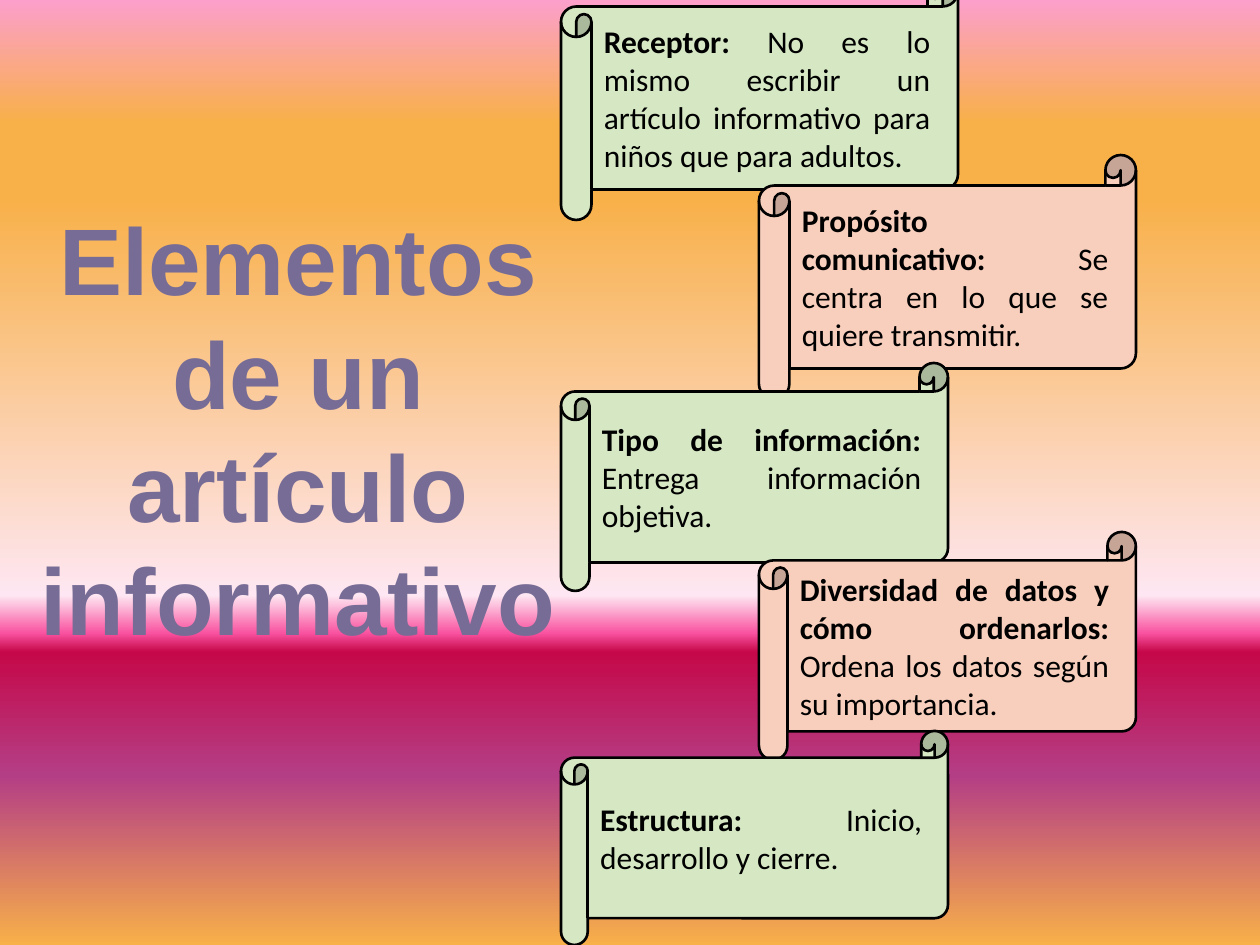
from lxml.etree import SubElement as Sub
from pptx import Presentation
from pptx.dml.color import RGBColor
from pptx.enum.shapes import MSO_SHAPE as Shape
from pptx.enum.text import MSO_ANCHOR as Anchor, MSO_AUTO_SIZE as Auto, PP_ALIGN as Align
from pptx.oxml.ns import qn
from pptx.util import Emu, Pt

SCALE = 914400 / 126
GREEN, PEACH = "D5E7C3", "F8CFBD"
LEFT, RIGHT = 561, 759
STOPS = [(0, "FC9FCB"), (13, "F8B049"), (21, "F8B049"), (63, "FEE7F2"),
         (67, "F952A0"), (69, "C50849"), (82, "B43E85"), (100, "F8B049")]
SCROLLS = [
    (LEFT, -24, 397, 244, GREEN, "Receptor:",
     " No es lo mismo escribir un artículo informativo para niños que para adultos."),
    (RIGHT, 155, 377, 244, PEACH, "Propósito comunicativo: ",
     "Se centra en lo que se quiere transmitir."),
    (LEFT, 363, 387, 228, GREEN, "Tipo de información: ",
     "Entrega información objetiva."),
    (RIGHT, 532, 377, 228, PEACH, "Diversidad de datos y cómo ordenarlos: ",
     "Ordena los datos según su importancia."),
    (LEFT, 731, 387, 214, GREEN, "Estructura:",
     " Inicio, desarrollo y cierre."),
]


def px(*nums):
    """Turn pixels into EMU lengths."""
    return [Emu(round(n * SCALE)) for n in nums]


def color(code):
    """Turn a hex string into a colour."""
    return RGBColor.from_string(code)


def write(para, text, size=18, font="Calibri", ink="000000", bold=False):
    """Add a formatted run to a paragraph and return it."""
    run = para.add_run()
    run.text = text
    run.font.size = Pt(size)
    run.font.name = font
    run.font.bold = bold
    run.font.color.rgb = color(ink)
    return run


def paint(slide):
    """Fill the background with a vertical gradient."""
    fill = slide.background.fill
    fill.gradient()
    fill.gradient_angle = 270
    stops = slide.element.find(".//" + qn("a:gsLst"))
    for old in list(stops):
        stops.remove(old)
    for pos, code in STOPS:
        stop = Sub(stops, qn("a:gs"), pos=str(pos * 1000))
        Sub(stop, qn("a:srgbClr"), val=code)


def outline(run, code, width):
    """Draw a thin line around the letters of a run."""
    props = run.font._element
    line = Sub(props, qn("a:ln"), w=str(Pt(width)))
    Sub(Sub(line, qn("a:solidFill")), qn("a:srgbClr"), val=code)
    props.insert(0, line)


def title(slide, text):
    """Add the large title."""
    frame = slide.shapes.add_textbox(*px(25, 195, 546, 472)).text_frame
    frame.word_wrap = True
    frame.auto_size = Auto.SHAPE_TO_FIT_TEXT
    para = frame.paragraphs[0]
    para.alignment = Align.CENTER
    run = write(para, text, size=54, font="Arial", ink="766C96", bold=True)
    outline(run, "EBEBEB", 1)


def scroll(slide, x, y, w, h, tint, head, body):
    """Add a scroll with a bold heading and its text."""
    shape = slide.shapes.add_shape(Shape.HORIZONTAL_SCROLL, *px(x, y, w, h))
    shape.shadow.inherit = False
    shape.fill.solid()
    shape.fill.fore_color.rgb = color(tint)
    shape.line.color.rgb = color("000000")
    shape.line.width = Pt(1.5)
    frame = shape.text_frame
    frame.word_wrap = True
    frame.vertical_anchor = Anchor.MIDDLE
    para = frame.paragraphs[0]
    para.alignment = Align.JUSTIFY
    write(para, head, bold=True)
    write(para, body)


def main():
    """Build and save the slide."""
    deck = Presentation()
    deck.slide_width, deck.slide_height = px(1260, 945)
    slide = deck.slides.add_slide(deck.slide_layouts[6])
    paint(slide)
    title(slide, "Elementos de un artículo informativo")
    for item in SCROLLS:
        scroll(slide, *item)
    deck.save("out.pptx")


if __name__ == "__main__":
    main()
